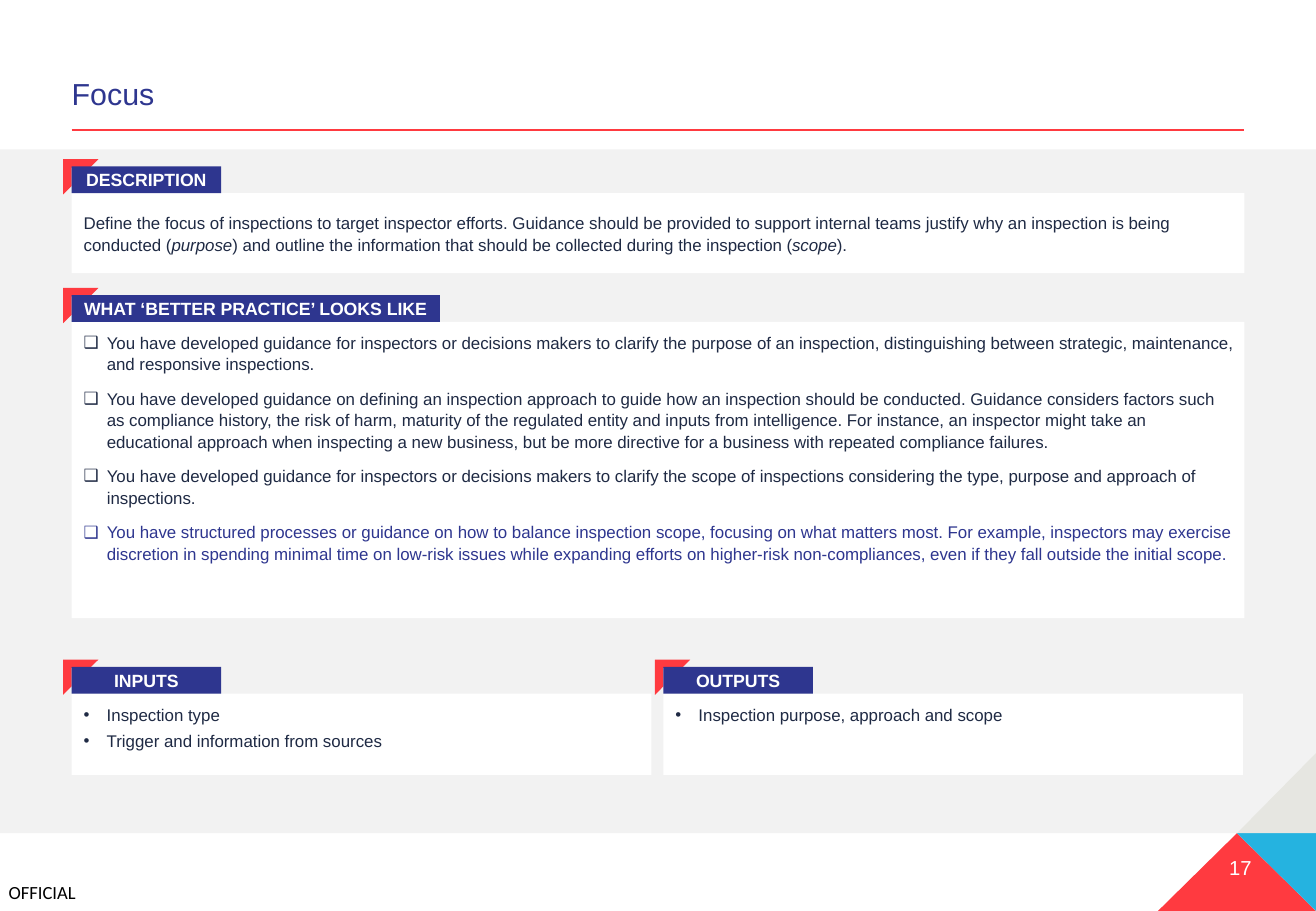
from lxml.etree import SubElement
from pptx import Presentation
from pptx.dml.color import RGBColor
from pptx.enum.shapes import MSO_CONNECTOR, MSO_SHAPE
from pptx.enum.text import MSO_ANCHOR, MSO_AUTO_SIZE, PP_ALIGN
from pptx.oxml.ns import qn
from pptx.util import Pt

PX = 9144
RED = RGBColor(0xFF, 0x3A, 0x40)
BLUE = RGBColor(0x2E, 0x36, 0x8F)
CYAN = RGBColor(0x25, 0xB3, 0xE0)
STONE = RGBColor(0xE6, 0xE6, 0xE1)
GREY = RGBColor(0xF2, 0xF2, 0xF2)
WHITE = RGBColor(0xFF, 0xFF, 0xFF)
BLACK = RGBColor(0, 0, 0)
INK = RGBColor(0x1F, 0x2A, 0x44)


def write(frame, paragraphs, size=10, color=INK, font="Arial", bold=False,
          align=PP_ALIGN.LEFT, anchor=MSO_ANCHOR.TOP, insets=(10, 5), wrap=True,
          bullet=None, before=0, after=0, spacing=1.0, last_color=None):
    frame.word_wrap = wrap
    frame.auto_size = MSO_AUTO_SIZE.NONE
    frame.vertical_anchor = anchor
    frame.margin_left = frame.margin_right = insets[0] * PX
    frame.margin_top = frame.margin_bottom = insets[1] * PX
    for index, runs in enumerate(paragraphs):
        paragraph = frame.add_paragraph() if index else frame.paragraphs[0]
        paragraph.alignment = align
        paragraph.line_spacing = spacing
        paragraph.space_before = Pt(before if index else 0)
        paragraph.space_after = Pt(after)
        if bullet:
            properties = paragraph._p.get_or_add_pPr()
            properties.set("marL", str(19 * PX))
            properties.set("indent", str(-19 * PX))
            SubElement(properties, qn("a:buFont"), typeface="Arial")
            SubElement(properties, qn("a:buChar"), char=bullet)
        is_last = index == len(paragraphs) - 1
        for position, words in enumerate(runs.split("*")):
            run = paragraph.add_run()
            run.text = words
            run.font.name = font
            run.font.size = Pt(size)
            run.font.bold = bold
            run.font.italic = position % 2 == 1
            run.font.color.rgb = last_color if last_color and is_last else color


def paint(shape, color):
    shape.shadow.inherit = False
    shape.fill.solid()
    shape.fill.fore_color.rgb = color
    shape.line.fill.background()
    return shape


deck = Presentation()
deck.slide_width = 1083 * PX
deck.slide_height = 750 * PX
slide = deck.slides.add_slide(deck.slide_layouts[5])
shapes = slide.shapes

title = shapes.title
title.left, title.top, title.width, title.height = [n * PX for n in (59, 59, 965, 38)]
write(title.text_frame, ["Focus"], size=18, color=BLUE, anchor=MSO_ANCHOR.BOTTOM,
      insets=(0, 5), spacing=0.9)

paint(shapes.add_shape(MSO_SHAPE.RECTANGLE, 0, 123 * PX, 1083 * PX, 563 * PX), GREY)

corner_triangles = [
    (RED, [(1018, 686), (953, 750), (1083, 750)]),
    (CYAN, [(1083, 686), (1018, 686), (1083, 750)]),
    (STONE, [(1083, 620), (1018, 686), (1083, 686)]),
]
for color, points in corner_triangles:
    outline = shapes.build_freeform(*points[0], scale=PX)
    outline.add_line_segments(points[1:], close=True)
    paint(outline.convert_to_shape(), color)

title_rule = shapes.add_connector(MSO_CONNECTOR.STRAIGHT, 59 * PX, 107 * PX, 1024 * PX, 107 * PX)
title_rule.line.color.rgb = RED
title_rule.line.width = Pt(1.25)
SubElement(title_rule._element.spPr, qn("a:effectLst"))

page_number = shapes.add_textbox(943 * PX, 699 * PX, 87 * PX, 30 * PX)
write(page_number.text_frame, ["17"], size=12, color=WHITE, align=PP_ALIGN.RIGHT, insets=(0, 5))
marking = shapes.add_textbox(7 * PX, 725 * PX, 59 * PX, 18 * PX)
write(marking.text_frame, ["OFFICIAL"], size=11, color=BLACK, font="Calibri",
      insets=(0, 0), wrap=False)

description = [
    "Define the focus of inspections to target inspector efforts. Guidance should be provided to "
    "support internal teams justify why an inspection is being conducted (*purpose*) and outline "
    "the information that should be collected during the inspection (*scope*).",
]
practices = [
    "You have developed guidance for inspectors or decisions makers to clarify the purpose of an "
    "inspection, distinguishing between strategic, maintenance, and responsive inspections.",
    "You have developed guidance on defining an inspection approach to guide how an inspection "
    "should be conducted. Guidance considers factors such as compliance history, the risk of harm, "
    "maturity of the regulated entity and inputs from intelligence. For instance, an inspector "
    "might take an educational approach when inspecting a new business, but be more directive for "
    "a business with repeated compliance failures.",
    "You have developed guidance for inspectors or decisions makers to clarify the scope of "
    "inspections considering the type, purpose and approach of inspections.",
    "You have structured processes or guidance on how to balance inspection scope, focusing on "
    "what matters most. For example, inspectors may exercise discretion in spending minimal time "
    "on low-risk issues while expanding efforts on higher-risk non-compliances, even if they fall "
    "outside the initial scope.",
]
inputs = ["Inspection type", "Trigger and information from sources"]
outputs = ["Inspection purpose, approach and scope"]

list_format = dict(insets=(10, 8), bullet="•", after=3)
practice_format = dict(insets=(10, 8), bullet="❑", before=6, after=2, last_color=BLUE)
sections = [
    ("DESCRIPTION", 123, (59, 159, 965, 66), description, dict(anchor=MSO_ANCHOR.MIDDLE, after=3)),
    ("WHAT ‘BETTER PRACTICE’ LOOKS LIKE", 303, (59, 265, 965, 244), practices, practice_format),
    ("INPUTS", 123, (59, 571, 477, 67), inputs, list_format),
    ("OUTPUTS", 123, (546, 571, 477, 67), outputs, list_format),
]
for heading, heading_width, (left, top, width, height), body, body_format in sections:
    card = paint(shapes.add_shape(MSO_SHAPE.RECTANGLE, left * PX, top * PX, width * PX, height * PX), WHITE)
    write(card.text_frame, body, spacing=1.05, **body_format)
    bracket = paint(shapes.add_shape(MSO_SHAPE.HALF_FRAME, (left - 7) * PX, (top - 28) * PX,
                                     29 * PX, 29 * PX), RED)
    bracket.adjustments[0] = bracket.adjustments[1] = 0.24
    tab = paint(shapes.add_shape(MSO_SHAPE.RECTANGLE, left * PX, (top - 22) * PX,
                                 heading_width * PX, 22 * PX), BLUE)
    write(tab.text_frame, [heading], size=10.5, color=WHITE, bold=True,
          align=PP_ALIGN.CENTER, anchor=MSO_ANCHOR.MIDDLE)

deck.save("out.pptx")
